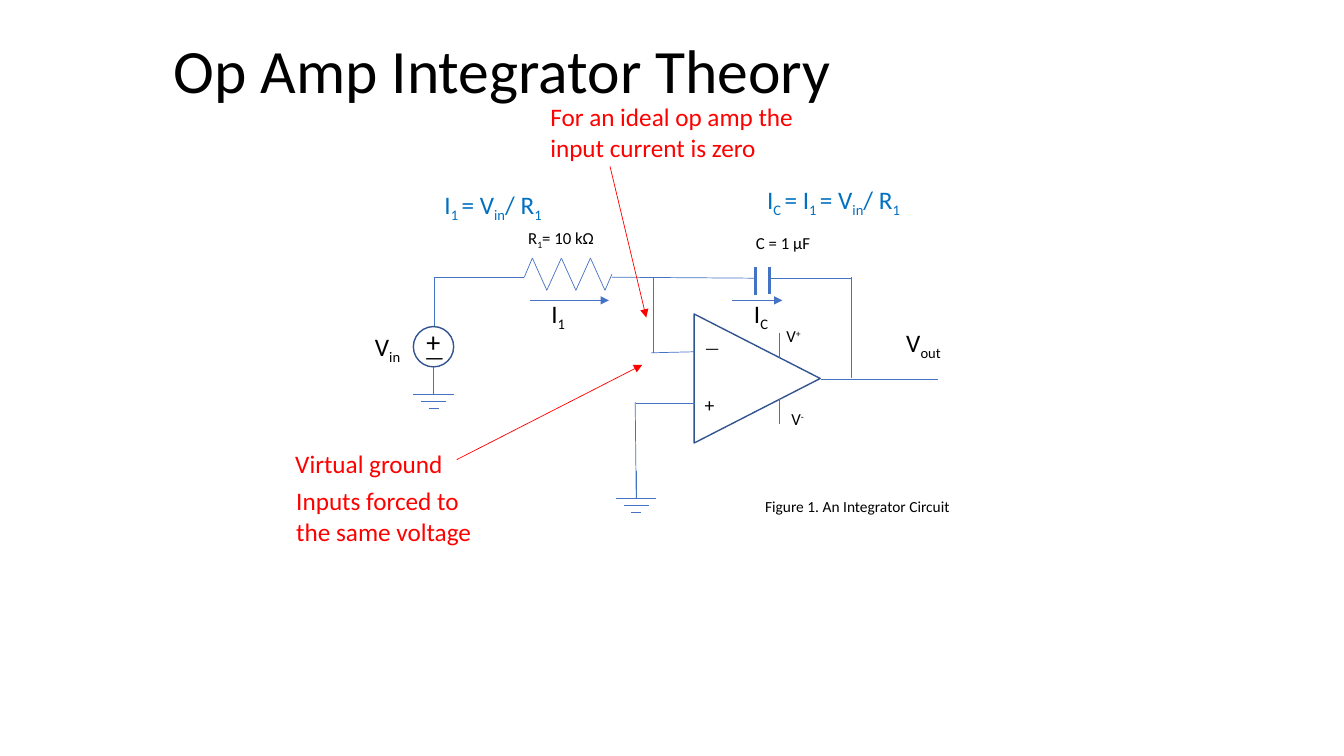
from dataclasses import dataclass
from itertools import pairwise

from lxml import etree
from pptx import Presentation
from pptx import util as u
from pptx.dml.color import RGBColor
from pptx.enum import shapes, text
from pptx.oxml import ns

BLACK, WHITE, RED, BLUE = "000000", "FFFFFF", "FF0000", "0070C0"
WIRE_COLOUR, OUTLINE_COLOUR = "4472C4", "325491"
FONT = "Calibri"


@dataclass(frozen=True)
class Wire:
    start: tuple[float, float]
    end: tuple[float, float]
    width: float = 0.5
    colour: str = WIRE_COLOUR
    arrow: bool = False


@dataclass(frozen=True)
class Label:
    """Pieces between bars alternate between normal and shifted text."""
    words: str
    box: tuple[float, float, float, float]
    size: float = 18
    colour: str = BLACK
    shift: int = -25
    spaced: bool = True
    fill: str | None = None


def rgb(colour: str) -> RGBColor:
    return RGBColor.from_string(colour)


def inches(values: tuple[float, ...]) -> list[u.Length]:
    return [u.Inches(value) for value in values]


def fill_text(frame, words: str, *, size: float, colour: str = BLACK, shift: int = -25,
              line_spacing: float = 1.0, space_after: float = 0,
              anchor=text.MSO_ANCHOR.TOP) -> None:
    frame.word_wrap = True
    frame.auto_size = text.MSO_AUTO_SIZE.NONE
    frame.vertical_anchor = anchor
    paragraph = frame.paragraphs[0]
    paragraph.alignment = text.PP_ALIGN.LEFT
    paragraph.line_spacing = line_spacing
    paragraph.space_after = u.Pt(space_after)
    for index, piece in enumerate(words.split("|")):
        if not piece:
            continue
        run = paragraph.add_run()
        run.text = piece
        run.font.name = FONT
        run.font.size = u.Pt(size)
        run.font.color.rgb = rgb(colour)
        if index % 2:
            run._r.get_or_add_rPr().set("baseline", str(shift * 1000))


def draw_label(slide, label: Label) -> None:
    if label.fill:
        holder = slide.shapes.add_shape(shapes.MSO_SHAPE.RECTANGLE, *inches(label.box))
        holder.shadow.inherit = False
        holder.fill.solid()
        holder.fill.fore_color.rgb = rgb(label.fill)
        holder.line.fill.background()
    else:
        holder = slide.shapes.add_textbox(*inches(label.box))
    fill_text(holder.text_frame, label.words, size=label.size, colour=label.colour,
              shift=label.shift, line_spacing=1.07 if label.spaced else 1.0,
              space_after=8 if label.spaced else 0)


def draw_wire(slide, wire: Wire) -> None:
    line = slide.shapes.add_connector(shapes.MSO_CONNECTOR.STRAIGHT,
                                      *inches(wire.start + wire.end))
    line.line.color.rgb = rgb(wire.colour)
    line.line.width = u.Pt(wire.width)
    if wire.arrow:
        etree.SubElement(line.line._get_or_add_ln(), ns.qn("a:tailEnd"), type="triangle")
    etree.SubElement(line._element.spPr, ns.qn("a:effectLst"))


def draw_outline(slide, kind, box: tuple[float, float, float, float],
                 rotation: float = 0) -> None:
    outline = slide.shapes.add_shape(kind, *inches(box))
    outline.rotation = rotation
    outline.shadow.inherit = False
    outline.fill.background()
    outline.line.color.rgb = rgb(OUTLINE_COLOUR)
    outline.line.width = u.Pt(1)


def ground(x: float, y: float) -> list[Wire]:
    bars = [Wire((x - half, y + 0.07 * row), (x + half, y + 0.07 * row))
            for row, half in enumerate((0.2, 0.125, 0.05))]
    return [Wire((x, y - 0.27), (x, y)), *bars]


def resistor() -> list[Wire]:
    teeth = [(5.28 + 0.144 * i, 2.88 if i % 2 else 2.56) for i in range(6)]
    return [Wire(a, b) for a, b in pairwise([(5.2, 2.75), *teeth, (6.07, 2.72)])]


CIRCUIT = [
    # Input source and resistor
    Wire((4.31, 3.23), (4.31, 2.75)),
    Wire((4.92, 2.75), (4.3, 2.75)),
    Wire((5.2, 2.75), (4.74, 2.75)),
    *resistor(),
    *ground(4.3, 3.91),
    # Inverting and non-inverting inputs
    Wire((6.07, 2.75), (7.49, 2.76)),
    Wire((6.48, 3.5), (6.48, 2.76)),
    Wire((6.46, 3.5), (6.89, 3.49)),
    Wire((6.31, 4), (6.89, 4)),
    Wire((6.31, 4.94), (6.3, 3.99)),
    *ground(6.31, 4.94),
    # Capacitor, feedback and output
    Wire((7.49, 2.93), (7.49, 2.65), width=2),
    Wire((7.63, 2.92), (7.63, 2.65), width=2),
    Wire((8.44, 2.76), (7.63, 2.76)),
    Wire((8.44, 3.75), (8.44, 2.75)),
    Wire((8.14, 3.76), (9.3, 3.76)),
    # Supply pins
    Wire((7.73, 3.3), (7.73, 3.55), width=1),
    Wire((7.73, 3.96), (7.73, 4.21), width=1),
    # Current directions
    Wire((5.26, 2.98), (6.04, 2.98), arrow=True),
    Wire((7.26, 2.98), (7.76, 2.98), arrow=True),
]

POINTERS = [
    Wire((4.53, 4.56), (6.37, 3.62), colour=RED, arrow=True),
    Wire((6.05, 1.65), (6.41, 3.15), colour=RED, arrow=True),
]

LABELS = [
    # Circuit labels
    Label("—", (6.89, 3.29, 0.34, 0.39), 12),
    Label("+", (6.89, 3.83, 0.34, 0.47), 14),
    Label("V|out", (8.89, 3.17, 0.57, 0.6)),
    Label("C = 1 μF", (7.4, 2.25, 0.86, 0.43), 12),
    Label("R|1|= 10 kΩ", (5.14, 2.19, 1.26, 0.49), 12),
    Label("+", (4.13, 3.15, 0.34, 0.58), 20),
    Label("—", (4.11, 3.34, 0.34, 0.5), 16),
    Label("V|in", (3.62, 3.21, 0.57, 0.41)),
    Label("V|+", (7.7, 3.17, 0.45, 0.35), 12, shift=30),
    Label("V|-", (7.75, 3.99, 0.45, 0.35), 12, shift=30),
    Label("I|1", (5.37, 2.91, 0.57, 0.4), spaced=False),
    Label("I|C", (7.38, 2.91, 0.57, 0.4), spaced=False),
    Label("Figure 1. An Integrator Circuit", (7.49, 4.87, 2.8, 0.29), 11, fill=WHITE),
    # Theory notes
    Label("Virtual ground", (2.83, 4.4, 1.7, 0.4), colour=RED, spaced=False),
    Label("Inputs forced to the same voltage", (2.84, 4.77, 2.14, 0.71),
          colour=RED, spaced=False),
    Label("For an ideal op amp the input current is zero", (5.36, 0.96, 2.64, 0.71),
          colour=RED, spaced=False),
    Label("I|1 |= V|in|/ R|1", (4.31, 1.83, 1.82, 0.4), colour=BLUE, spaced=False),
    Label("I|C |= I|1 |= V|in|/ R|1", (7.51, 1.78, 1.82, 0.4), colour=BLUE, spaced=False),
]


def main() -> None:
    deck = Presentation()
    deck.slide_width, deck.slide_height = inches((13.33, 7.5))
    slide = deck.slides.add_slide(deck.slide_layouts[5])

    # Title
    title = slide.shapes.title
    title.left, title.top, title.width, title.height = inches((1.62, 0, 10.05, 1.45))
    fill_text(title.text_frame, "Op Amp Integrator Theory", size=44, line_spacing=0.9,
              anchor=text.MSO_ANCHOR.MIDDLE)

    # Op amp and voltage source
    draw_outline(slide, shapes.MSO_SHAPE.ISOSCELES_TRIANGLE, (6.87, 3.13, 1.28, 1.25), 90)
    draw_outline(slide, shapes.MSO_SHAPE.OVAL, (4.1, 3.24, 0.4, 0.4))

    # Wires, labels and pointers
    for wire in CIRCUIT:
        draw_wire(slide, wire)
    for label in LABELS:
        draw_label(slide, label)
    for pointer in POINTERS:
        draw_wire(slide, pointer)

    deck.save("out.pptx")


if __name__ == "__main__":
    main()
